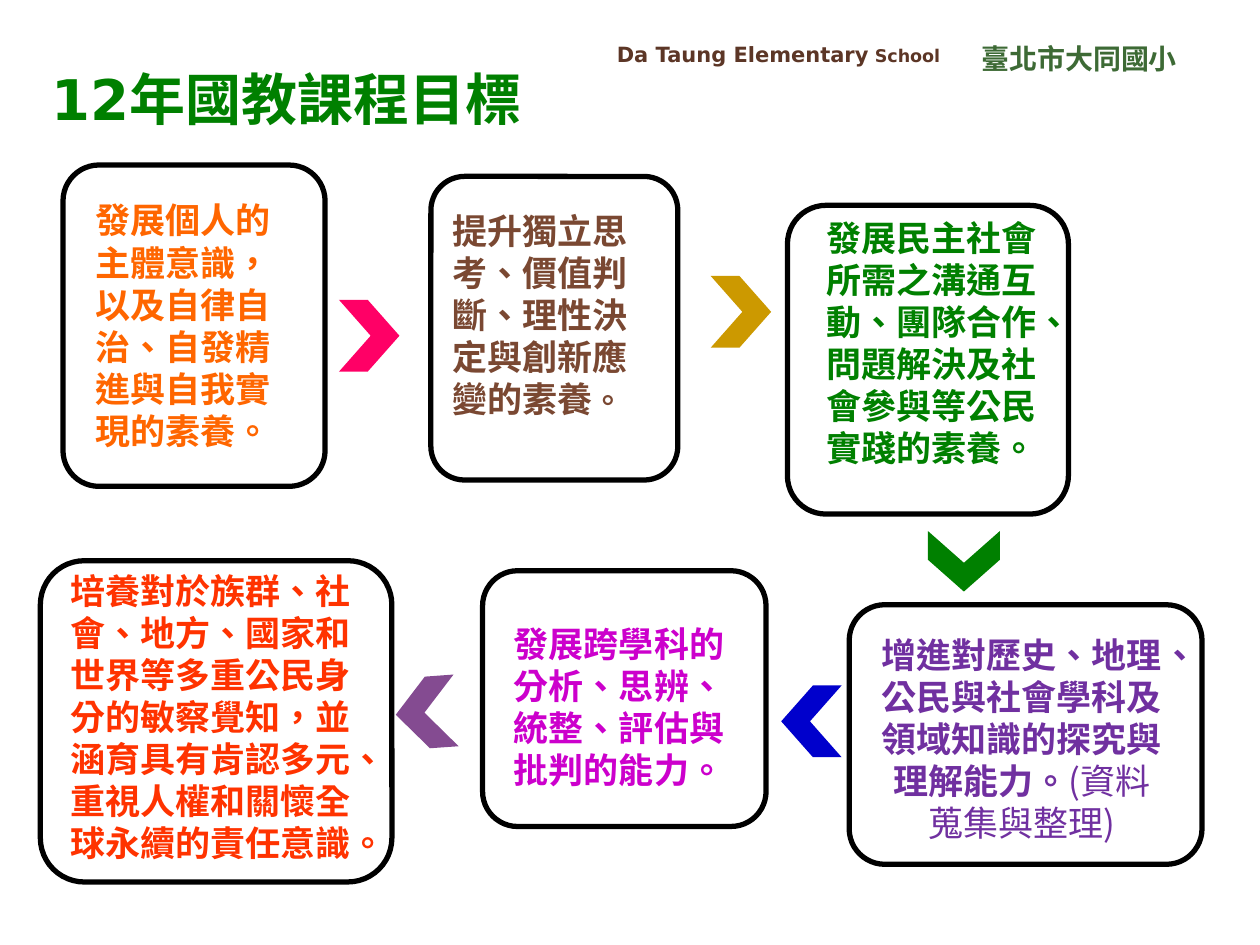
from pptx import Presentation
from pptx.dml.color import RGBColor
from pptx.enum.lang import MSO_LANGUAGE_ID as Language
from pptx.enum.shapes import MSO_SHAPE as Shape
from pptx.enum.text import MSO_ANCHOR as Anchor, PP_ALIGN as Align
from pptx.oxml import parse_xml
from pptx.oxml.ns import nsdecls
from pptx.util import Inches, Pt

BLACK = RGBColor(0x00, 0x00, 0x00)
GREEN = RGBColor(0x00, 0x80, 0x00)
DARK_BROWN = RGBColor(0x5C, 0x36, 0x26)
MOSS = RGBColor(0x3D, 0x6A, 0x35)
ORANGE = RGBColor(0xFF, 0x66, 0x00)
BROWN = RGBColor(0x7A, 0x48, 0x32)
PURPLE = RGBColor(0x70, 0x30, 0xA0)
MAGENTA = RGBColor(0xCC, 0x00, 0xCC)
RED = RGBColor(0xFF, 0x33, 0x00)
PINK = RGBColor(0xFF, 0x00, 0x66)
GOLD = RGBColor(0xCC, 0x99, 0x00)
PLUM = RGBColor(0x84, 0x4B, 0x91)
BLUE = RGBColor(0x00, 0x00, 0xCC)

SANS = "DejaVu Sans"
CJK = "Noto Sans CJK SC"
SERIF = "Times New Roman"

FRAMES = [
    (0.5, 1.31, 2.08, 2.55),
    (3.42, 1.4, 1.96, 2.41),
    (6.25, 1.63, 2.23, 2.45),
    (6.74, 4.8, 2.8, 2.06),
    (3.83, 4.53, 2.25, 2.03),
    (0.32, 4.45, 2.79, 2.55),
]

CHEVRONS = [
    (2.69, 2.38, 0, PINK),
    (5.64, 2.19, 0, GOLD),
    (7.41, 4.17, 90, GREEN),
    (6.2, 5.44, 180, BLUE),
    (3.14, 5.37, 175.9, PLUM),
]

GOALS = [
    ((0.57, 1.53, 1.77, 2.12), CJK, ORANGE, Align.CENTER,
     [("發展個人的主體意識，以及自律自治、自發精進與自我實現的素養。", 20, True)]),
    ((3.49, 1.61, 1.61, 1.78), SERIF, BROWN, Align.LEFT,
     [("提升獨立思考、價值判斷、理性決定與創新應變的素養", 20, True), ("。", 18, True)]),
    ((6.46, 1.67, 2.11, 2.12), CJK, GREEN, Align.LEFT,
     [("發展民主社會所需之溝通互動、團隊合作、問題解決及社會參與等公民實踐的素養。", 20, True)]),
    ((6.89, 4.98, 2.44, 1.78), CJK, PURPLE, Align.CENTER,
     [("增進對歷史、地理、公民與社會學科及領域知識的探究與理解能力。", 20, True),
      ("(資料蒐集與整理)", 20, False)]),
    ((3.98, 4.89, 2.04, 1.45), SERIF, MAGENTA, Align.LEFT,
     [("發展跨學科的分析、思辨、統整、評估與批判的能力。", 20, True)]),
    ((0.46, 4.47, 2.65, 2.46), SERIF, RED, Align.LEFT,
     [("培養對於族群、社會、地方、國家和世界等多重公民身分的敏察覺知，"
       "並涵育具有肯認多元、重視人權和關懷全球永續的責任意識。", 20, True)]),
]


def add_text(page, place, font_name, color, align, spans, anchor=Anchor.TOP):
    """Add a wrapping text box holding one paragraph of (text, size, bold) spans."""
    box = page.shapes.add_textbox(*map(Inches, place))
    frame = box.text_frame
    frame.word_wrap = True
    frame.vertical_anchor = anchor
    para = frame.paragraphs[0]
    para.alignment = align
    for text, size, bold in spans:
        span = para.add_run()
        span.text = text
        font = span.font
        font.name, font.size, font.bold = font_name, Pt(size), bold
        font.color.rgb = color
        font.language_id = Language.TRADITIONAL_CHINESE
        latin = span._r.rPr.find("{*}latin")
        latin.addnext(parse_xml(f'<a:ea {nsdecls("a")} typeface="{CJK}"/>'))


def add_frame(page, place):
    """Add an unfilled rounded frame with a black outline."""
    frame = page.shapes.add_shape(Shape.ROUNDED_RECTANGLE, *map(Inches, place))
    frame.adjustments[0] = 0.137
    frame.shadow.inherit = False
    frame.fill.background()
    frame.line.color.rgb = BLACK
    frame.line.width = Pt(3)


def add_chevron(page, left, top, rotation, color):
    """Add a chevron that points to the next goal."""
    chevron = page.shapes.add_shape(
        Shape.CHEVRON, Inches(left), Inches(top), Inches(0.48), Inches(0.57))
    chevron.adjustments[0] = 0.525
    chevron.rotation = rotation
    chevron.shadow.inherit = False
    chevron.fill.solid()
    chevron.fill.fore_color.rgb = color
    chevron.line.fill.background()


def main():
    """Build the slide of curriculum goals and save it."""
    deck = Presentation()
    deck.slide_width, deck.slide_height = Inches(10), Inches(7.5)
    page = deck.slides.add_slide(deck.slide_layouts[6])
    add_text(page, (0.31, 0.47, 8.11, 0.62), SANS, GREEN, Align.LEFT,
             [("12年國教課程目標", 32, True)], Anchor.MIDDLE)
    add_text(page, (4.76, 0.28, 2.8, 0.35), SANS, DARK_BROWN, Align.RIGHT,
             [("Da Taung Elementary", 12, True), (" School", 10, True)])
    add_text(page, (7.52, 0.28, 1.92, 0.39), CJK, MOSS, Align.RIGHT,
             [("臺北市大同國小", 16, True)])
    for place in FRAMES:
        add_frame(page, place)
    for chevron in CHEVRONS:
        add_chevron(page, *chevron)
    for goal in GOALS:
        add_text(page, *goal)
    deck.save("out.pptx")


if __name__ == "__main__":
    main()
